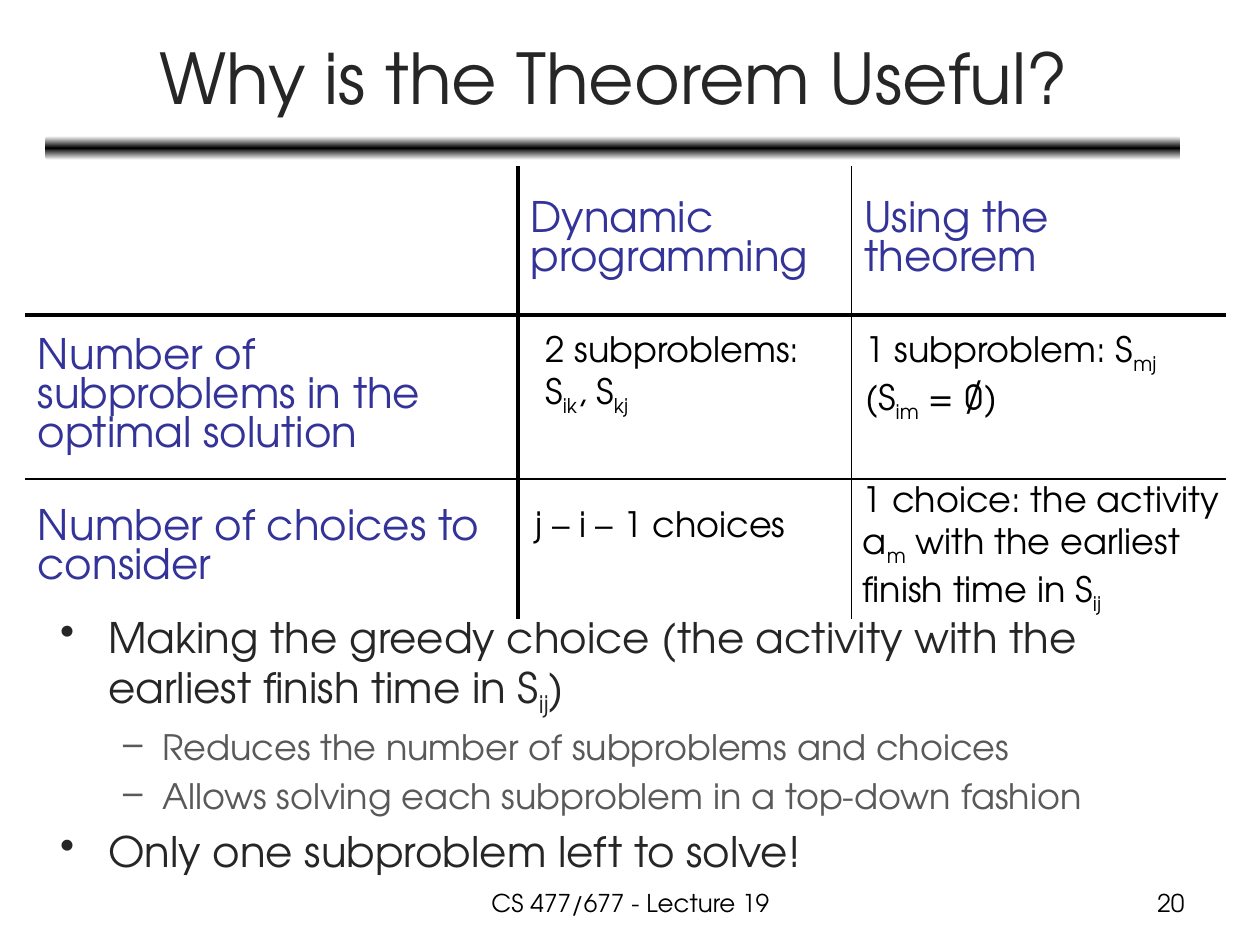
from pptx import Presentation
from pptx.dml.color import RGBColor
from pptx.enum.shapes import MSO_SHAPE
from pptx.enum.text import MSO_ANCHOR, MSO_AUTO_SIZE, PP_ALIGN
from pptx.oxml import parse_xml
from pptx.oxml.ns import nsdecls
from pptx.util import Inches, Pt

LEFT, CENTER, RIGHT = PP_ALIGN.LEFT, PP_ALIGN.CENTER, PP_ALIGN.RIGHT
TOP, MIDDLE = MSO_ANCHOR.TOP, MSO_ANCHOR.MIDDLE
GROW = MSO_AUTO_SIZE.SHAPE_TO_FIT_TEXT
ROUNDED = MSO_SHAPE.ROUNDED_RECTANGLE

FONT = "TeX Gyre Adventor"
BLACK, INK, GREY, BLUE = "000000", "262626", "595959", "333399"
THICK, THIN = 2.25, 1

COLUMN_WIDTHS = (3.91, 2.65, 2.97)
ROW_HEIGHTS = (1.18, 1.12, 1.11)
HEADINGS = {
    (0, 1): "Dynamic programming",
    (0, 2): "Using the theorem",
    (1, 0): "Number of subproblems in the optimal solution",
    (2, 0): "Number of choices to consider",
}
ANSWERS = [
    ((4.23, 2.55, 2.24, 0.77), ["2 subproblems:", "S|ik|, S|kj"]),
    ((6.77, 2.55, 2.57, 0.77), ["1 subproblem: S|mj", "(S|im| = ∅)"]),
    ((4.15, 3.94, 2.22, 0.44), ["j – i – 1 choices"]),
    ((6.75, 3.74, 3.05, 1.11),
     ["1 choice: the activity", "a|m| with the earliest", "finish time in S|ij"]),
]
CONCLUSIONS = [
    (0, "Making the greedy choice (the activity with the earliest finish time in S|ij|)"),
    (1, "Reduces the number of subproblems and choices"),
    (1, "Allows solving each subproblem in a top-down fashion"),
    (0, "Only one subproblem left to solve!"),
]
BULLET_LEVELS = [("•", 0.38, 0.38, 24, INK), ("–", 0.81, 0.31, 20, GREY)]


def color(value):
    """Turn a hex string into a colour."""
    return RGBColor.from_string(value)


def write(paragraph, text, size, ink, align=LEFT):
    """Fill a paragraph; every second part between bars is a subscript."""
    for index, part in enumerate(text.split("|")):
        if part:
            run = paragraph.add_run()
            run.text = part
            if index % 2:
                run.font._element.set("baseline", "-25000")
    paragraph.alignment = align
    paragraph.font.name = FONT
    paragraph.font.size = Pt(size)
    paragraph.font.color.rgb = color(ink)


def add_frame(slide, box, wrap=True, anchor=TOP):
    """Add an empty text box and return its text frame."""
    frame = slide.shapes.add_textbox(*map(Inches, box)).text_frame
    frame.word_wrap = wrap
    frame.vertical_anchor = anchor
    return frame


def next_paragraph(frame, index):
    """Return the first paragraph of a frame, or a new one after it."""
    return frame.add_paragraph() if index else frame.paragraphs[0]


def add_line(slide, box, text, size, ink, align, anchor=TOP):
    """Add a text box with one paragraph."""
    write(add_frame(slide, box, anchor=anchor).paragraphs[0], text, size, ink, align)


def add_answer(slide, box, lines):
    """Add an unwrapped text over a table cell."""
    frame = add_frame(slide, box, wrap=False)
    frame.auto_size = GROW
    for index, line in enumerate(lines):
        write(next_paragraph(frame, index), line, 20, BLACK)


def add_conclusions(slide, box):
    """Add the bulleted list on two levels."""
    frame = add_frame(slide, box)
    for index, (level, text) in enumerate(CONCLUSIONS):
        bullet, margin, hang, size, ink = BULLET_LEVELS[level]
        paragraph = next_paragraph(frame, index)
        paragraph.level = level
        paragraph.space_before = Pt(size * 0.2)
        write(paragraph, text, size, ink)
        properties = paragraph._p.get_or_add_pPr()
        properties.set("marL", str(Inches(margin)))
        properties.set("indent", str(-Inches(hang)))
        char = parse_xml(f'<a:buChar {nsdecls("a")} char="{bullet}"/>')
        properties.find("{*}spcBef").addnext(char)


def add_title_rule(slide, box):
    """Add the bar that fades to white above and below."""
    bar = slide.shapes.add_shape(ROUNDED, *map(Inches, box))
    bar.shadow.inherit = False
    bar.line.fill.background()
    stops = "".join(
        f'<a:gs pos="{place}"><a:srgbClr val="{shade}"/></a:gs>'
        for place, shade in ((0, "FFFFFF"), (50000, BLACK), (100000, "FFFFFF")))
    gradient = parse_xml(
        f'<a:gradFill {nsdecls("a")}><a:gsLst>{stops}</a:gsLst>'
        '<a:lin ang="5400000" scaled="0"/></a:gradFill>')
    bar._element.spPr.find("{*}prstGeom").addnext(gradient)


def set_borders(cell, left, right, top, bottom):
    """Draw the borders of a cell; a width of zero means no line."""
    properties = cell._tc.get_or_add_tcPr()
    for side, width in zip("LRTB", (left, right, top, bottom)):
        fill = (f'<a:solidFill><a:srgbClr val="{BLACK}"/></a:solidFill>'
                if width else "<a:noFill/>")
        properties.append(parse_xml(
            f'<a:ln{side} {nsdecls("a")} w="{Pt(width)}">{fill}</a:ln{side}>'))


def add_comparison(slide, left, top):
    """Add the table that compares the two approaches."""
    size = Inches(sum(COLUMN_WIDTHS)), Inches(sum(ROW_HEIGHTS))
    table = slide.shapes.add_table(
        len(ROW_HEIGHTS), len(COLUMN_WIDTHS), Inches(left), Inches(top), *size).table
    table.first_row = table.horz_banding = False
    for column, width in zip(table.columns, COLUMN_WIDTHS):
        column.width = Inches(width)
    for row, height in zip(table.rows, ROW_HEIGHTS):
        row.height = Inches(height)
    rules = (0, THICK, THIN, 0)
    for r in range(len(ROW_HEIGHTS)):
        for c in range(len(COLUMN_WIDTHS)):
            cell = table.cell(r, c)
            set_borders(cell, rules[c], rules[c + 1], rules[r], rules[r + 1])
            cell.fill.background()
            cell.vertical_anchor = MIDDLE
            if (r, c) in HEADINGS:
                heading = cell.text_frame.paragraphs[0]
                heading.space_before = Pt(4.8)
                write(heading, HEADINGS[r, c], 24, BLUE)


def main():
    """Build the slide and save it."""
    deck = Presentation()
    deck.slide_width, deck.slide_height = Inches(10), Inches(7.5)
    slide = deck.slides.add_slide(deck.slide_layouts[6])
    add_title_rule(slide, (0.36, 1.08, 9.01, 0.19))
    add_line(slide, (3.42, 7, 3.17, 0.35), "CS 477/677 - Lecture 19", 14, BLACK, CENTER)
    add_line(slide, (0.37, 0.11, 9, 0.99), "Why is the Theorem Useful?", 40, INK, CENTER, MIDDLE)
    add_conclusions(slide, (0.38, 4.8, 9.37, 2.41))
    add_comparison(slide, 0.2, 1.32)
    for box, lines in ANSWERS:
        add_answer(slide, box, lines)
    add_line(slide, (7.17, 7, 2.33, 0.35), "20", 14, BLACK, RIGHT)
    deck.save("out.pptx")


if __name__ == "__main__":
    main()
